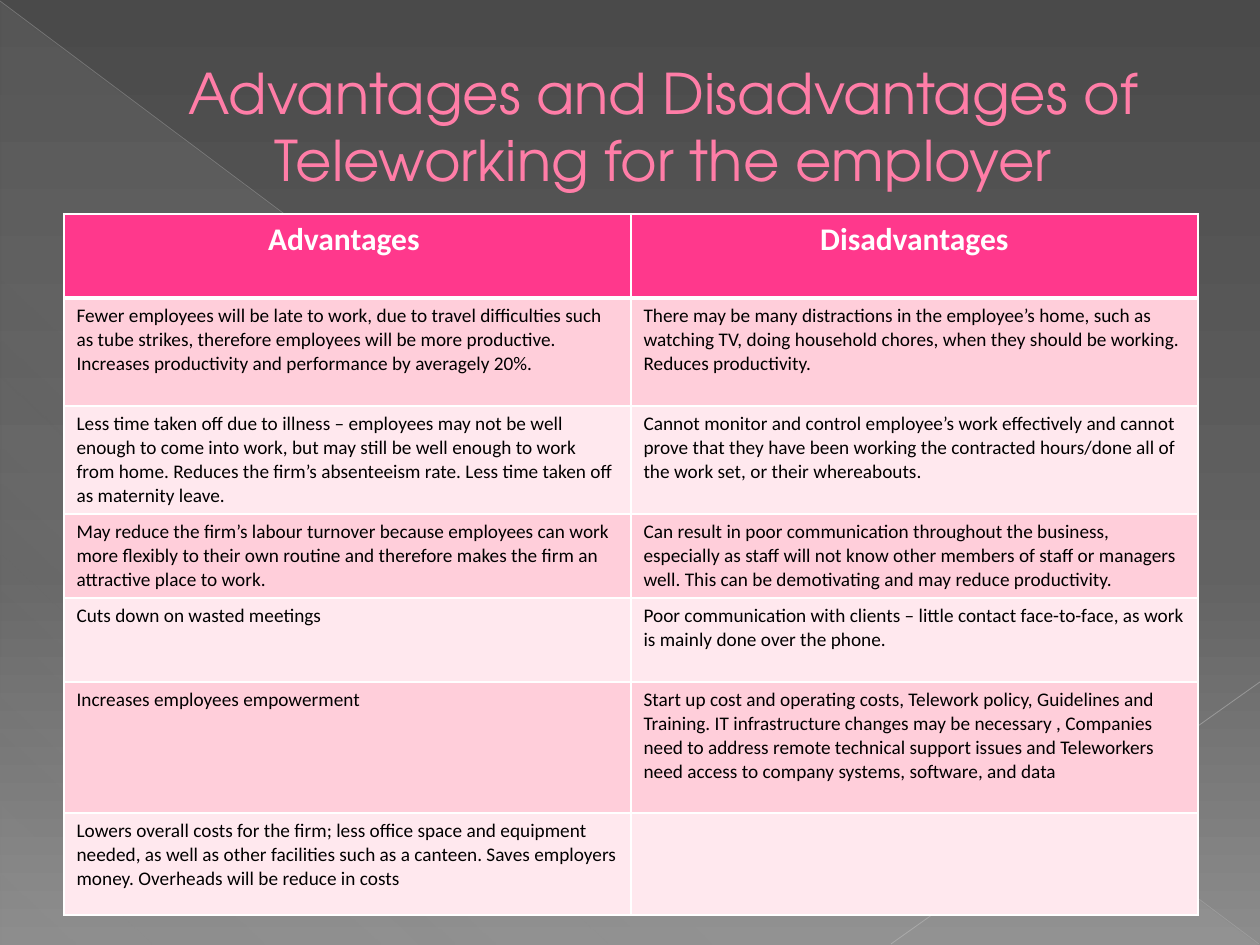
from lxml.etree import SubElement
from pptx import Presentation
from pptx.dml.color import RGBColor
from pptx.enum.shapes import MSO_CONNECTOR, MSO_SHAPE
from pptx.enum.text import MSO_ANCHOR, PP_ALIGN
from pptx.oxml.ns import qn
from pptx.util import Pt

PX = 7257


def rgb(value):
    return RGBColor.from_string(value)


def sub(parent, tag, **attrs):
    return SubElement(parent, qn(tag), {k: str(v) for k, v in attrs.items()})


prs = Presentation()
prs.slide_width, prs.slide_height = 1260 * PX, 945 * PX
s = prs.slides.add_slide(prs.slide_layouts[5])

s.background.fill.gradient()
sp = s.shapes.add_shape(MSO_SHAPE.RIGHT_TRIANGLE, 1 * PX, 2 * PX, 1258 * PX, 943 * PX)
sp.shadow.inherit = False
sp.fill.gradient()
sp.line.fill.background()
gradients = [
    (s.background.fill, s.element, 90, [(0, "4A4A4A", 100), (60, "626262", 100), (100, "8C8C8C", 100)]),
    (sp.fill, sp.element, 133, [(0, "D2D2D2", 10), (70, "D2D2D2", 8), (100, "D2D2D2", 1)]),
]
for fill, element, angle, stops in gradients:
    grad = next(element.iter(qn("a:gradFill")))
    grad.find(qn("a:lin")).set("ang", str(angle * 60000))
    gs_list = grad.find(qn("a:gsLst"))
    for gs in list(gs_list):
        gs_list.remove(gs)
    for pos, color, alpha in stops:
        gs = sub(gs_list, "a:gs", pos=pos * 1000)
        sub(sub(gs, "a:srgbClr", val=color), "a:alpha", val=alpha * 1000)

lines = [
    ((0, 1, 1259, 944), "BFBFBF", 0.39, 35),
    ((1260, 682, 891, 944), "C6C6C6", 0.47, 45),
]
for ends, color, width, alpha in lines:
    line = s.shapes.add_connector(MSO_CONNECTOR.STRAIGHT, *[v * PX for v in ends])
    line.line.width = Pt(width)
    line.line.color.rgb = rgb(color)
    sub(next(line.element.iter(qn("a:srgbClr"))), "a:alpha", val=alpha * 1000)
    sub(line.element.spPr, "a:effectLst")

title = s.shapes.title
title.element.getparent().append(title.element)
for name, value in {"left": 63, "top": 37, "width": 1134, "height": 177}.items():
    setattr(title, name, value * PX)
tf = title.text_frame
tf.word_wrap = True
tf.vertical_anchor = MSO_ANCHOR.MIDDLE
p = tf.paragraphs[0]
p.alignment = PP_ALIGN.CENTER
p._p.get_or_add_pPr().set("marL", str(67 * PX))
r = p.add_run()
r.text = "Advantages and Disadvantages of Teleworking for the employer"
outline = sub(r._r.get_or_add_rPr(), "a:ln", w=6350)
sub(sub(outline, "a:solidFill"), "a:srgbClr", val="B12761")
for name, value in {"name": "TeX Gyre Adventor", "size": Pt(32)}.items():
    setattr(r.font, name, value)
r.font.color.rgb = rgb("FF7DA7")

rows = [
    (84, "Advantages ", "Disadvantages"),
    (108,
     "Fewer employees will be late to work, due to travel difficulties such as tube strikes, therefore employees "
     "will be more productive. Increases productivity and performance by averagely 20%.",
     "There may be many distractions in the employee’s home, such as watching TV, doing household chores, when "
     "they should be working. Reduces productivity."),
    (108,
     "Less time taken off due to illness – employees may not be well enough to come into work, but may still be "
     "well enough to work from home. Reduces the firm’s absenteeism rate. Less time taken off as maternity leave.",
     "Cannot monitor and control employee’s work effectively and cannot prove that they have been working the "
     "contracted hours/done all of the work set, or their whereabouts."),
    (84,
     "May reduce the firm’s labour turnover because employees can work more flexibly to their own routine and "
     "therefore makes the firm an attractive place to work.",
     "Can result in poor communication throughout the business, especially as staff will not know other members "
     "of staff or managers well. This can be demotivating and may reduce productivity."),
    (84,
     "Cuts down on wasted meetings",
     "Poor communication with clients – little contact face-to-face, as work is mainly done over the phone."),
    (131,
     "Increases employees empowerment",
     "Start up cost and operating costs, Telework policy, Guidelines and Training. IT infrastructure changes may "
     "be necessary , Companies need to address remote technical support issues and Teleworkers need access to "
     "company systems, software, and data"),
    (102,
     "Lowers overall costs for the firm; less office space and equipment needed, as well as other facilities such "
     "as a canteen. Saves employers money. Overheads will be reduce in costs",
     ""),
]
HEADER = {"name": "Calibri", "size": Pt(18), "bold": True}
BODY = {"name": "Calibri", "size": Pt(11), "bold": False}
height = sum(row[0] for row in rows)
table = s.shapes.add_table(len(rows), 2, 64 * PX, 214 * PX, 1134 * PX, height * PX).table
for i, (row_height, *texts) in enumerate(rows):
    table.rows[i].height = row_height * PX
    for j, text in enumerate(texts):
        cell = table.cell(i, j)
        tcPr = cell._tc.get_or_add_tcPr()
        for side in "LRTB":
            thick = (i, side) in [(0, "B"), (1, "T")]
            border = sub(tcPr, f"a:ln{side}", w=Pt(3 if thick else 1))
            sub(sub(border, "a:solidFill"), "a:srgbClr", val="FFFFFF")
        cell.fill.solid()
        cell.fill.fore_color.rgb = rgb("FF388C" if i == 0 else ("FFE8EE", "FFCEDA")[i % 2])
        if text:
            p = cell.text_frame.paragraphs[0]
            p.alignment = PP_ALIGN.LEFT if i else PP_ALIGN.CENTER
            r = p.add_run()
            r.text = text
            for name, value in (BODY if i else HEADER).items():
                setattr(r.font, name, value)
            r.font.color.rgb = rgb("000000" if i else "FFFFFF")

prs.save("out.pptx")
